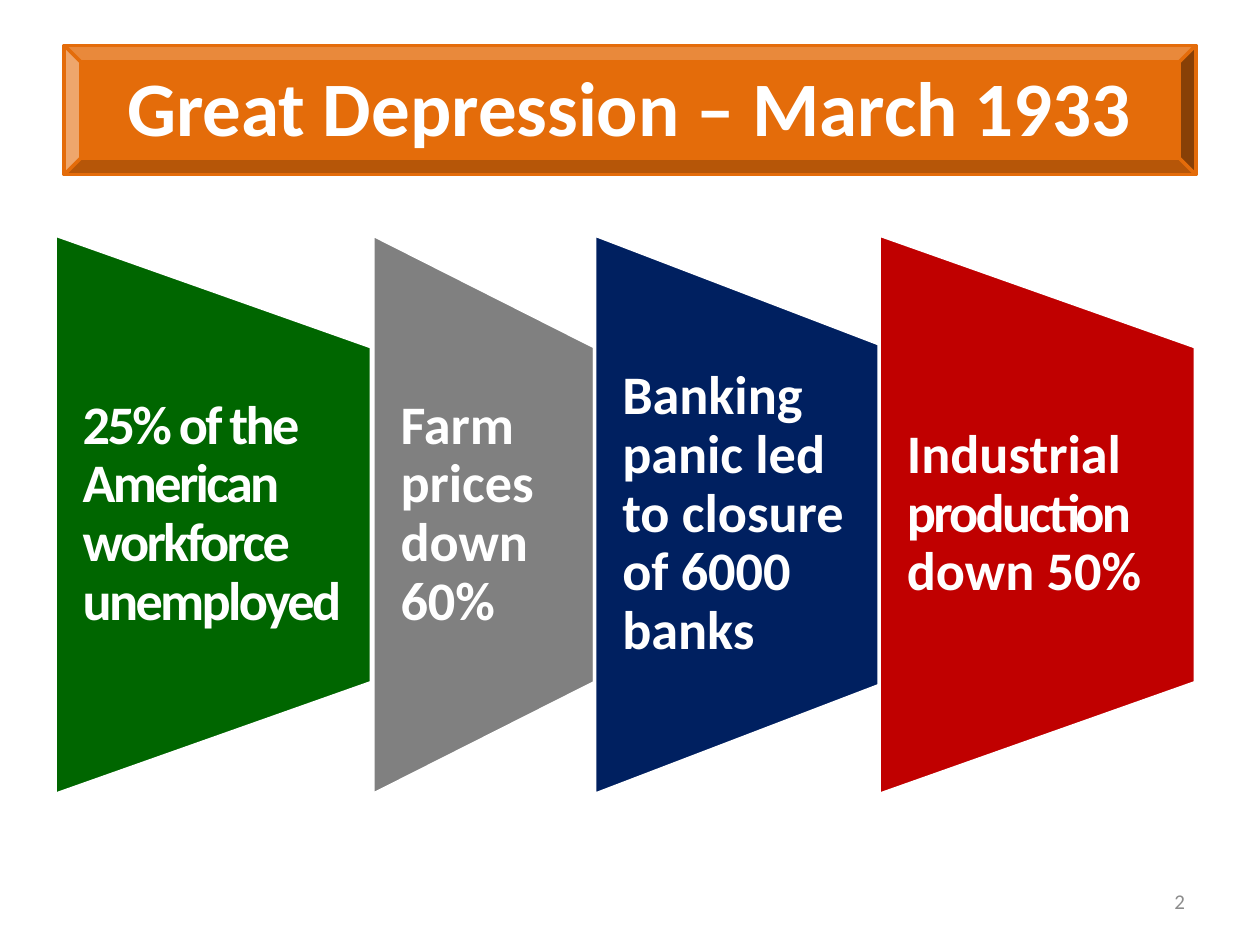
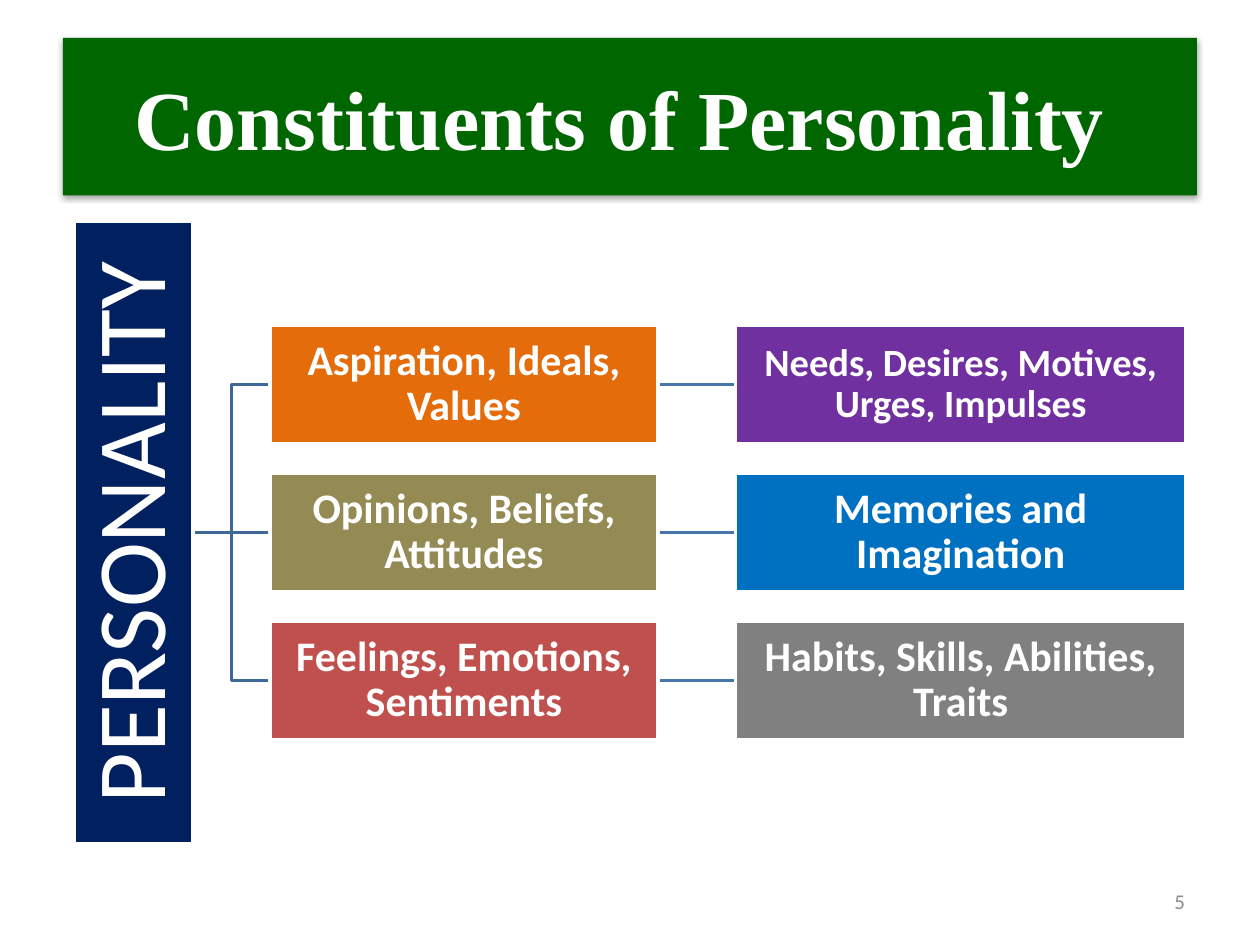
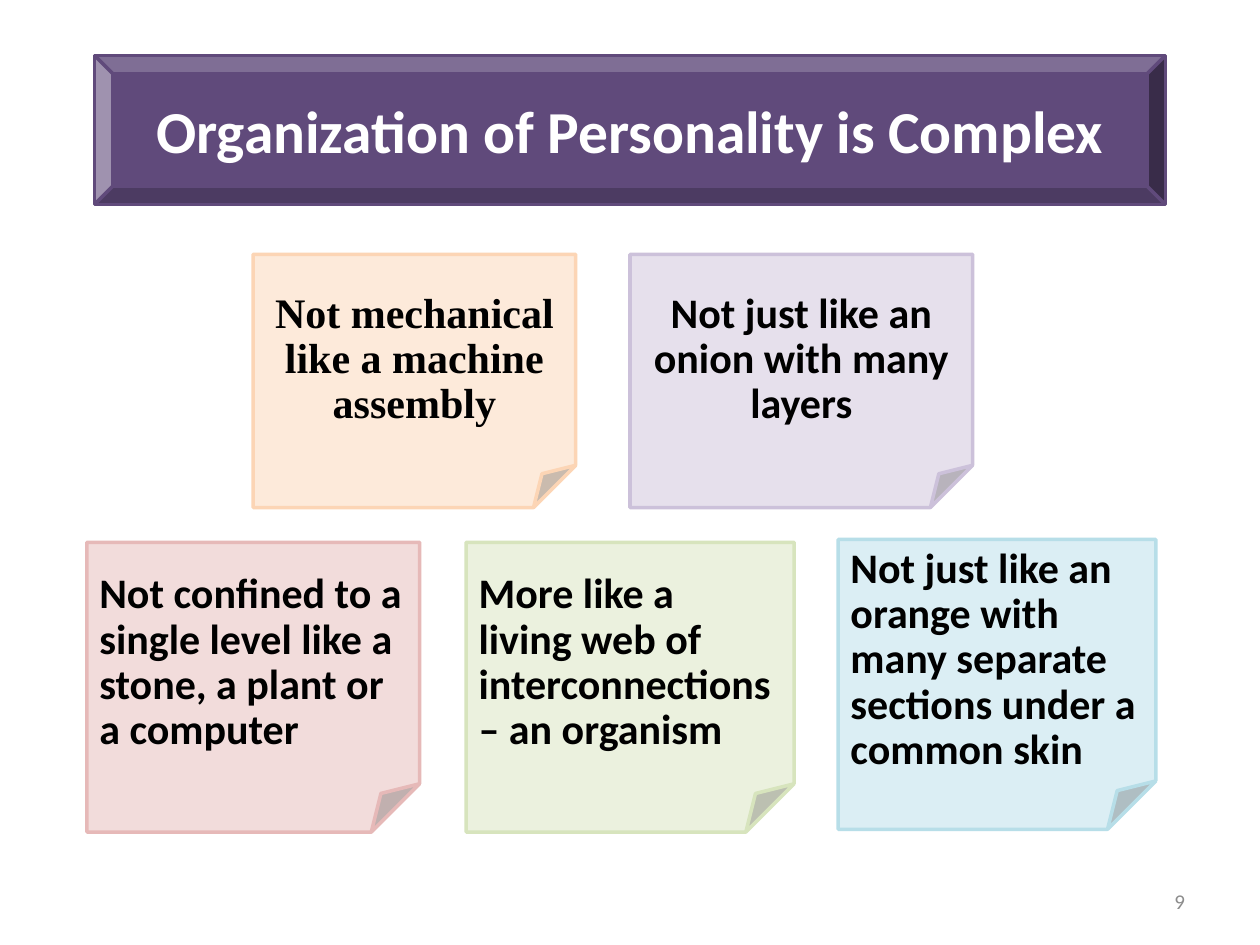
from dataclasses import dataclass

from lxml import etree
from pptx import Presentation
from pptx.dml.color import RGBColor
from pptx.enum.shapes import MSO_CONNECTOR, MSO_SHAPE
from pptx.enum.text import MSO_ANCHOR, PP_ALIGN
from pptx.oxml.ns import qn
from pptx.util import Pt

RECT = MSO_SHAPE.RECTANGLE
BEVEL = MSO_SHAPE.BEVEL
NOTE = MSO_SHAPE.FOLDED_CORNER
PANEL = MSO_SHAPE.FLOWCHART_MANUAL_OPERATION
STRAIGHT = MSO_CONNECTOR.STRAIGHT
ELBOW = MSO_CONNECTOR.ELBOW
LEFT, CENTER, RIGHT = PP_ALIGN.LEFT, PP_ALIGN.CENTER, PP_ALIGN.RIGHT
MIDDLE = MSO_ANCHOR.MIDDLE
SIDE_LEFT, SIDE_RIGHT = 1, 3


@dataclass(frozen=True)
class Theme:
    sans: str = "Calibri"
    serif: str = "Times New Roman"
    white: str = "FFFFFF"
    black: str = "000000"
    muted: str = "8C8C8C"
    orange: str = "E46C0A"
    green: str = "006600"
    gray: str = "808080"
    navy: str = "002060"
    red: str = "C00000"
    purple: str = "7030A0"
    olive: str = "948A54"
    blue: str = "0070C0"
    brick: str = "C0504D"
    violet: str = "604A7B"
    branch: str = "3F6797"
    link: str = "4875AC"
    title: float = 44
    serif_title: float = 48
    small_title: float = 34
    stem: float = 56
    panel: float = 31
    body: float = 24
    tight: float = 22
    footer: float = 12
    line: float = 2
    leading: float = 0.9


def assign(target, **values):
    for name, value in values.items():
        setattr(target, name, value)


class Deck:
    def __init__(self, theme):
        self.theme = theme
        self.prs = Presentation()
        assign(self.prs, slide_width=Pt(720), slide_height=Pt(540))
        self.s = None

    def slide(self, number):
        self.s = self.prs.slides.add_slide(self.prs.slide_layouts[6])
        self.label((516.2, 500.4, 168, 28.8), str(number), size=self.theme.footer,
                   color=self.theme.muted, align=RIGHT)

    def shape(self, kind, at, fill, line=None, rotation=0):
        sp = self.s.shapes.add_shape(kind, *map(Pt, at))
        sp.rotation = rotation
        sp.shadow.inherit = False
        sp.fill.solid()
        sp.fill.fore_color.rgb = RGBColor.from_string(fill)
        if line:
            sp.line.color.rgb = RGBColor.from_string(line)
            sp.line.width = Pt(self.theme.line)
        else:
            sp.line.fill.background()
        return sp

    def label(self, at, content, **style):
        sp = self.s.shapes.add_textbox(*map(Pt, at))
        self.text(sp, content, **style)

    def text(self, sp, content, size, color=None, font=None, bold=False, align=CENTER,
             leading=1.0, before=0, insets=(7.2, 3.6)):
        tf = sp.text_frame
        side, edge = map(Pt, insets)
        assign(tf, word_wrap=True, vertical_anchor=MIDDLE, margin_left=side,
               margin_right=side, margin_top=edge, margin_bottom=edge)
        p = tf.paragraphs[0]
        assign(p, alignment=align, line_spacing=leading, space_before=Pt(before))
        runs = [(content, 0)] if isinstance(content, str) else content
        for words, spacing in runs:
            for i, part in enumerate(words.split("\n")):
                if i:
                    p.add_line_break()
                r = p.add_run()
                r.text = part
                assign(r.font, name=font or self.theme.sans, size=Pt(size), bold=bold)
                r.font.color.rgb = RGBColor.from_string(color or self.theme.white)
                if spacing:
                    r._r.get_or_add_rPr().set("spc", str(round(spacing * 100)))

    def drop_shadow(self, sp, blur, distance, opacity):
        effects = sp._element.spPr.find(qn("a:effectLst"))
        shadow = etree.SubElement(effects, qn("a:outerShdw"), blurRad=str(Pt(blur)),
                                  dist=str(Pt(distance)), dir="5400000", rotWithShape="0")
        tint = etree.SubElement(shadow, qn("a:srgbClr"), val=self.theme.black)
        etree.SubElement(tint, qn("a:alpha"), val=str(opacity * 1000))

    def connect(self, kind, start, end, color):
        c = self.s.shapes.add_connector(kind, 0, 0, 0, 0)
        c.begin_connect(start, SIDE_RIGHT)
        c.end_connect(end, SIDE_LEFT)
        c.line.color.rgb = RGBColor.from_string(color)
        c.line.width = Pt(self.theme.line)
        etree.SubElement(c._element.spPr, qn("a:effectLst"))
        self.s.shapes._spTree.insert(2, c._element)

    def panel(self, left, width, fill, content):
        height, middle = 319.7, 294.1
        at = (left + (width - height) / 2, middle - width / 2, height, width)
        self.shape(PANEL, at, fill, self.theme.white, rotation=270)
        self.label((left, 198, width, 192.2), content, size=self.theme.panel, bold=True,
                   align=LEFT, leading=self.theme.leading, insets=(15.8, 0))

    def box(self, at, fill, content, size, bold=True, inset=1.4):
        sp = self.shape(RECT, at, fill, self.theme.white)
        self.text(sp, content, size=size, bold=bold, leading=self.theme.leading,
                  insets=(inset, inset))
        return sp

    def note(self, at, fill, line, content, align=LEFT, font=None):
        sp = self.shape(NOTE, at, fill, line)
        self.text(sp, content, size=self.theme.body, color=self.theme.black, font=font,
                  bold=True, align=align, leading=self.theme.leading, before=10)


def depression(deck):
    t = deck.theme
    deck.slide(2)
    deck.shape(BEVEL, (36.7, 25.9, 646.6, 73.9), t.orange, t.orange)
    deck.label((36, 15.1, 648, 90), "Great Depression – March 1933", size=t.title, bold=True)
    panels = [
        (31.5, 180.7, t.green, [("25% of the American workforce unemployed", -1.5)]),
        (213.1, 126.7, t.gray, "Farm prices down 60%"),
        (339.8, 167, t.navy, "Banking panic led to closure of 6000 banks"),
        (502.4, 180.7, t.red, [("Industrial ", 0), ("production ", -1.5), ("down 50%", 0)]),
    ]
    for panel in panels:
        deck.panel(*panel)


def constituents(deck):
    t = deck.theme
    deck.slide(5)
    banner = deck.shape(RECT, (36, 21.6, 648, 90), t.green)
    deck.drop_shadow(banner, blur=3.1, distance=1.8, opacity=35)
    deck.text(banner, "Constituents of Personality ", size=t.serif_title, font=t.serif, bold=True)

    top, height, pitch, stem_height = 185.8, 67.7, 84.6, 355.6
    middle = top + pitch + height / 2
    stem = deck.box((42.6, middle - stem_height / 2, height, stem_height), t.navy,
                    "PERSONALITY", t.stem, bold=False, inset=2.8)
    stem.text_frame._txBody.bodyPr.set("vert", "vert270")
    rows = [
        (t.orange, "Aspiration, Ideals, Values",
         t.purple, "Needs, Desires, Motives, Urges, Impulses", t.tight),
        (t.olive, "Opinions, Beliefs, Attitudes",
         t.blue, "Memories and Imagination", t.body),
        (t.brick, "Feelings, Emotions, Sentiments",
         t.gray, "Habits, Skills, Abilities, Traits", t.body),
    ]
    for i, (fill, content, pair_fill, pair_content, pair_size) in enumerate(rows):
        y = top + i * pitch
        trait = deck.box((154.2, y, 221.9, height), fill, content, t.body)
        pair = deck.box((420.4, y, 257.1, height), pair_fill, pair_content, pair_size)
        deck.connect(STRAIGHT if i == 1 else ELBOW, stem, trait, t.branch)
        deck.connect(STRAIGHT, trait, pair, t.link)


def organization(deck):
    t = deck.theme
    deck.slide(9)
    banner = deck.shape(BEVEL, (54, 31.7, 612, 85.2), t.violet, t.violet)
    deck.text(banner, "Organization of Personality is Complex", size=t.small_title, bold=True)
    deck.note((144.6, 145.3, 184.4, 144.7), "FDEADA", "FCD5B5",
              "Not mechanical like a machine assembly", CENTER, t.serif)
    deck.note((360, 145.3, 195.8, 144.7), "E6E0EC", "CCC1DA",
              "Not just like an onion with many layers", CENTER)
    lower = [
        (49.7, 309.9, 190.1, "F2DCDB", "E6B9B8",
         "Not confined to a single level like a stone, a plant or a computer"),
        (266.4, 309.9, 187.4, "EBF1DE", "D7E4BD",
         "More like a\nliving web of interconnections – an organism"),
        (478.9, 308.3, 181.6, "DBEEF4", "B7DEE8",
         "Not just like an orange with many separate sections under a common skin"),
    ]
    for left, top, width, fill, line, content in lower:
        deck.note((left, top, width, 165.6), fill, line, content)


def main():
    deck = Deck(Theme())
    for build in (depression, constituents, organization):
        build(deck)
    deck.prs.save("out.pptx")


if __name__ == "__main__":
    main()
